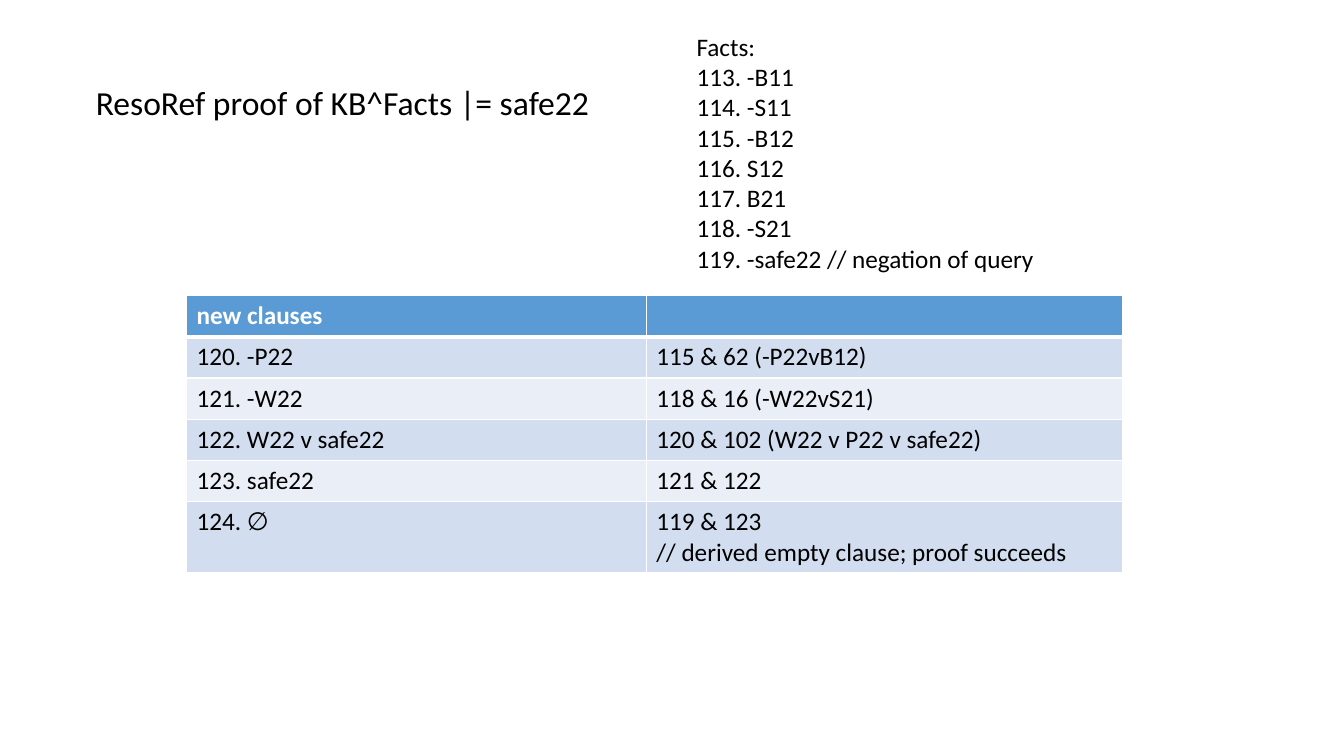
from dataclasses import dataclass

from lxml import etree
from pptx import Presentation
from pptx import util as u
from pptx.dml.color import RGBColor
from pptx.enum import text as t
from pptx.oxml import ns


@dataclass(frozen=True)
class Theme:
    font: str = "Calibri"
    title_size: int = 24
    body_size: int = 18
    ink: str = "000000"
    paper: str = "FFFFFF"
    header: str = "5B9BD5"
    bands: tuple[str, str] = ("D2DEEF", "EAEFF7")
    rule: int = 1
    header_rule: int = 3


@dataclass(frozen=True)
class Step:
    clause: str
    reason: str
    height: float = 0.41


@dataclass(frozen=True)
class Box:
    left: float
    top: float
    width: float
    height: float

    def lengths(self) -> tuple:
        return tuple(u.Inches(n) for n in (self.left, self.top, self.width, self.height))


THEME = Theme()
TITLE_BOX = Box(0.85, 0.76, 5.14, 0.91)
FACTS_BOX = Box(6.81, 0.26, 3.72, 2.52)
PROOF_BOX = Box(1.85, 2.93, 9.28, 2.73)
COLUMN_WIDTHS = (4.56, 4.72)
FACTS = ("-B11", "-S11", "-B12", "S12", "B21", "-S21", "-safe22 // negation of query")
STEPS = (
    Step("new clauses", ""),
    Step("120. -P22", "115 & 62 (-P22vB12)"),
    Step("121. -W22", "118 & 16 (-W22vS21)"),
    Step("122. W22 v safe22", "120 & 102 (W22 v P22 v safe22)"),
    Step("123. safe22", "121 & 122"),
    Step("124. ∅", "119 & 123\n// derived empty clause; proof succeeds", 0.68),
)


def write(frame, wording: str, size: int, color: str, bold: bool = False) -> None:
    frame.text = wording
    for paragraph in frame.paragraphs:
        paragraph.alignment = t.PP_ALIGN.LEFT
        paragraph.font.name = THEME.font
        paragraph.font.size = u.Pt(size)
        paragraph.font.bold = bold
        paragraph.font.color.rgb = RGBColor.from_string(color)


def draw_border(cell, side: str, width: int) -> None:
    properties = cell._tc.get_or_add_tcPr()
    line = etree.SubElement(properties, ns.qn(f"a:ln{side}"), w=str(u.Pt(width)))
    fill = etree.SubElement(line, ns.qn("a:solidFill"))
    etree.SubElement(fill, ns.qn("a:srgbClr"), val=THEME.paper)


def draw_title(slide) -> None:
    title = slide.shapes.title
    title.left, title.top, title.width, title.height = TITLE_BOX.lengths()
    frame = title.text_frame
    frame.word_wrap = False
    frame.auto_size = t.MSO_AUTO_SIZE.NONE
    frame.vertical_anchor = t.MSO_ANCHOR.TOP
    write(frame, "ResoRef proof of KB^Facts |= safe22", THEME.title_size, THEME.ink)


def draw_facts(slide) -> None:
    frame = slide.shapes.add_textbox(*FACTS_BOX.lengths()).text_frame
    frame.word_wrap = False
    numbered = [f"{number}. {fact}" for number, fact in enumerate(FACTS, 113)]
    write(frame, "\n".join(["Facts:", *numbered]), THEME.body_size, THEME.ink)


def draw_cell(cell, wording: str, row: int) -> None:
    is_header = row == 0
    write(cell.text_frame, wording, THEME.body_size,
          THEME.paper if is_header else THEME.ink, is_header)
    widths = {
        "L": THEME.rule,
        "R": THEME.rule,
        "T": THEME.header_rule if row == 1 else THEME.rule,
        "B": THEME.header_rule if is_header else THEME.rule,
    }
    for side, width in widths.items():
        draw_border(cell, side, width)
    cell.fill.solid()
    color = THEME.header if is_header else THEME.bands[(row - 1) % 2]
    cell.fill.fore_color.rgb = RGBColor.from_string(color)


def draw_proof(slide) -> None:
    proof = slide.shapes.add_table(
        len(STEPS), len(COLUMN_WIDTHS), *PROOF_BOX.lengths()).table
    for column, width in zip(proof.columns, COLUMN_WIDTHS):
        column.width = u.Inches(width)
    for row, step in enumerate(STEPS):
        proof.rows[row].height = u.Inches(step.height)
        for column, wording in enumerate((step.clause, step.reason)):
            draw_cell(proof.cell(row, column), wording, row)


def main() -> None:
    deck = Presentation()
    deck.slide_width, deck.slide_height = u.Inches(13.33), u.Inches(7.5)
    slide = deck.slides.add_slide(deck.slide_layouts.get_by_name("Title Only"))
    draw_title(slide)
    draw_facts(slide)
    draw_proof(slide)
    deck.save("out.pptx")


if __name__ == "__main__":
    main()
